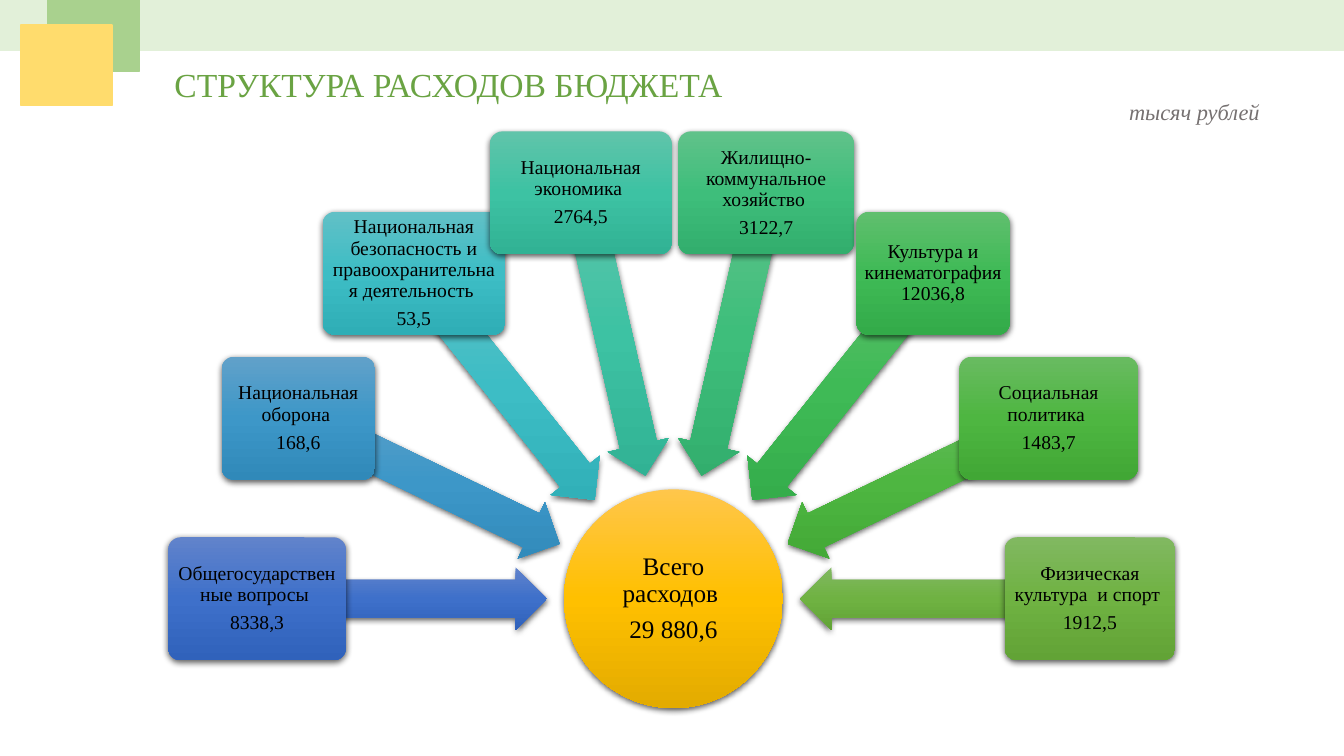
import math

from lxml import etree
from pptx import Presentation
from pptx.dml.color import RGBColor
from pptx.enum import shapes, text
from pptx.oxml.ns import qn
from pptx.util import Inches, Pt

FONT = "Times New Roman"
COLOURS = {
    "title": "6AA343", "unit": "767171", "label": "000000", "shadow": "000000",
    "band": "E2F0D9", "green square": "A9D18E", "yellow square": "FFDC6D",
}
# Top, middle and bottom of each vertical gradient
GRADIENTS = {
    "hub": ("FFC64B", "FFC000", "E3AB00"),
    "blue": ("6183CB", "3E70CA", "3062BB"),
    "sky": ("61A1C9", "3D97C8", "3089B9"),
    "cyan": ("61C0C6", "3DBDC5", "2FAEB6"),
    "teal": ("60C4AA", "3DC2A3", "31B294"),
    "mint": ("60C28A", "3EBE7B", "32AE6D"),
    "emerald": ("60BF6E", "3FBA56", "33AB49"),
    "grass": ("69BB61", "4EB641", "41A735"),
    "olive": ("81B861", "6FB242", "62A336"),
}
# Gradient, box width, paragraphs; clockwise from the left
EXPENSES = [
    ("blue", 1.76, ["Общегосударственные вопросы ", "8338,3"]),
    ("sky", 1.52, ["Национальная оборона ", "168,6"]),
    ("cyan", 1.81, ["Национальная безопасность и правоохранительная деятельность ", "53,5"]),
    ("teal", 1.8, ["Национальная экономика ", "2764,5"]),
    ("mint", 1.74, ["Жилищно-коммунальное хозяйство ", "3122,7"]),
    ("emerald", 1.52, ["Культура и кинематография 12036,8"]),
    ("grass", 1.77, ["Социальная политика ", "1483,7"]),
    ("olive", 1.69, ["Физическая культура  и спорт ", "1912,5"]),
]
HUB_X, HUB_Y, HUB_SIZE = 6.68, 5.94, 2.17
ARROW_RADIUS, ARROW_LENGTH, ARROW_WIDTH = 2.7, 2.89, 0.62
BOX_RADIUS, BOX_HEIGHT = 4.13, 1.22


def rgb(name):
    return RGBColor.from_string(COLOURS[name])


def write(frame, lines, size, colour, frame_format, para_format, italic=False):
    for name, value in frame_format.items():
        setattr(frame, name, value)
    for index, line in enumerate(lines):
        para = frame.add_paragraph() if index else frame.paragraphs[0]
        for name, value in para_format.items():
            setattr(para, name, value)
        span = para.add_run()
        span.text = line
        for name, value in {"name": FONT, "size": Pt(size), "italic": italic}.items():
            setattr(span.font, name, value)
        span.font.color.rgb = rgb(colour)


def write_line(shape, line, size, colour, italic=False):
    """Write one unwrapped, left-aligned line from the top of the shape."""
    write(shape.text_frame, [line], size, colour,
          {"word_wrap": False, "vertical_anchor": text.MSO_ANCHOR.TOP},
          {"alignment": text.PP_ALIGN.LEFT}, italic)


def write_label(shape, lines, size, inset):
    margins = {f"margin_{side}": Inches(inset) for side in ("left", "top", "right", "bottom")}
    write(shape.text_frame, lines, size, "label",
          {"word_wrap": True, "vertical_anchor": text.MSO_ANCHOR.MIDDLE, **margins},
          {"alignment": text.PP_ALIGN.CENTER, "line_spacing": 0.9,
           "space_after": Pt(0.35 * size)})


def add_block(page, colour, left, top, width, height):
    block = page.shapes.add_shape(shapes.MSO_SHAPE.RECTANGLE, Inches(left), Inches(top),
                                  Inches(width), Inches(height))
    block.shadow.inherit = False
    block.fill.solid()
    block.fill.fore_color.rgb = rgb(colour)
    block.line.color.rgb = rgb(colour)
    block.line.width = Pt(1)


def set_gradient(shape, gradient):
    shape.fill.gradient()
    shape.fill.gradient_angle = 270
    fill = shape.element.spPr.find(qn("a:gradFill"))
    fill.set("rotWithShape", "0")
    stops = fill.find(qn("a:gsLst"))
    for stop in list(stops):
        stops.remove(stop)
    for position, colour in zip((0, 50000, 100000), GRADIENTS[gradient]):
        stop = etree.SubElement(stops, qn("a:gs"), pos=str(position))
        etree.SubElement(stop, qn("a:srgbClr"), val=colour)


def set_shadow(shape):
    shape.shadow.inherit = False
    effects = shape.element.spPr.find(qn("a:effectLst"))
    shadow = etree.SubElement(effects, qn("a:outerShdw"), blurRad=str(Pt(4.5)),
                              dist=str(Pt(1.5)), dir="5400000", algn="ctr", rotWithShape="0")
    colour = etree.SubElement(shadow, qn("a:srgbClr"), val=COLOURS["shadow"])
    etree.SubElement(colour, qn("a:alpha"), val="63000")


def add_glossy(page, kind, gradient, centre, width, height, adjustments=()):
    """Add a shaded preset shape around a centre point."""
    x, y = centre
    shape = page.shapes.add_shape(kind, Inches(x - width / 2), Inches(y - height / 2),
                                  Inches(width), Inches(height))
    for index, value in enumerate(adjustments):
        shape.adjustments[index] = value
    set_gradient(shape, gradient)
    shape.line.fill.background()
    set_shadow(shape)
    return shape


def around_hub(radius, degrees):
    """Give the point at a clockwise angle from the left of the hub."""
    angle = math.radians(degrees)
    return HUB_X - radius * math.cos(angle), HUB_Y - radius * math.sin(angle)


def add_expense(page, degrees, gradient, width, lines):
    arrow = add_glossy(page, shapes.MSO_SHAPE.LEFT_ARROW, gradient,
                       around_hub(ARROW_RADIUS, degrees), ARROW_LENGTH, ARROW_WIDTH, (0.6, 0.5))
    arrow.rotation = (180 + degrees) % 360
    box = add_glossy(page, shapes.MSO_SHAPE.ROUNDED_RECTANGLE, gradient,
                     around_hub(BOX_RADIUS, degrees), width, BOX_HEIGHT, (0.1,))
    write_label(box, lines, 14, 0.03)


def main():
    deck = Presentation()
    deck.slide_width, deck.slide_height = Inches(13.33), Inches(7.5)
    page = deck.slides.add_slide(deck.slide_layouts[5])

    title = page.shapes.title
    place = {"left": 1.63, "top": 0.58, "width": 5.69, "height": 0.5}
    for name, value in place.items():
        setattr(title, name, Inches(value))
    write_line(title, "СТРУКТУРА РАСХОДОВ БЮДЖЕТА", 24, "title")

    add_block(page, "band", 0, 0, 13.33, 0.5)
    add_block(page, "green square", 0.47, 0, 0.91, 0.71)
    add_block(page, "yellow square", 0.21, 0.25, 0.9, 0.8)

    hub = add_glossy(page, shapes.MSO_SHAPE.OVAL, "hub", (HUB_X, HUB_Y), HUB_SIZE, HUB_SIZE)
    write_label(hub, ["Всего расходов ", "29 880,6"], 18, 0.01)
    step = 180 / (len(EXPENSES) - 1)
    for index, expense in enumerate(EXPENSES):
        add_expense(page, index * step, *expense)

    unit = page.shapes.add_textbox(Inches(11.1), Inches(0.92), Inches(1.52), Inches(0.37))
    write_line(unit, "тысяч рублей", 16, "unit", italic=True)
    deck.save("out.pptx")


if __name__ == "__main__":
    main()
